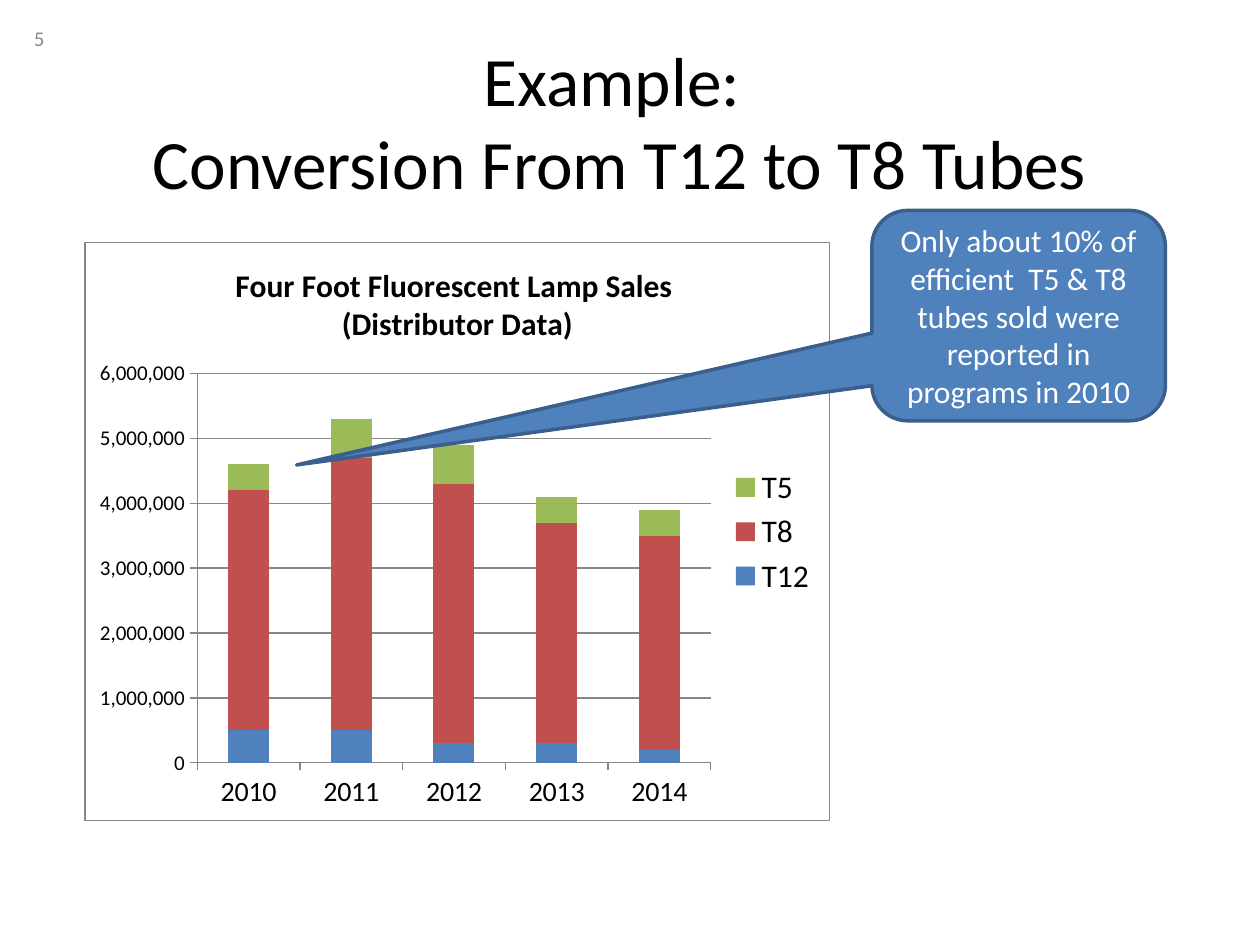
import pptx
import pptx.chart.data
import pptx.dml.color
import pptx.enum.chart
import pptx.enum.shapes
import pptx.enum.text
import pptx.oxml
import pptx.oxml.ns
import pptx.util

Inches = pptx.util.Inches
Pt = pptx.util.Pt
COLORS = {
    "text": "000000",
    "number": "8C8C8C",
    "white": "FFFFFF",
    "axis": "868686",
    "callout": "4F81BD",
    "outline": "3A5F8C",
    "T12": "4F81BD",
    "T8": "C0504D",
    "T5": "9BBB59",
}
YEARS = ["2010", "2011", "2012", "2013", "2014"]
SALES = {
    "T12": [500000, 500000, 300000, 300000, 200000],
    "T8": [3700000, 4200000, 4000000, 3400000, 3300000],
    "T5": [400000, 600000, 600000, 400000, 400000],
}


def color(name):
    return pptx.dml.color.RGBColor.from_string(COLORS[name])


def style_font(font, size, name="text", bold=False):
    font.name = "Calibri"
    font.size = Pt(size)
    font.bold = bold
    font.color.rgb = color(name)


def write_text(frame, text, size, name="text", bold=False, align="CENTER"):
    paragraph = frame.paragraphs[0]
    paragraph.text = text
    paragraph.alignment = getattr(pptx.enum.text.PP_ALIGN, align)
    for run in paragraph.runs:
        style_font(run.font, size, name, bold)


class SlideBuilder:
    def __init__(self, slide):
        self.slide = slide

    def text(self, box, text, size, **options):
        shape = self.slide.shapes.add_textbox(*map(Inches, box))
        frame = shape.text_frame
        frame.word_wrap = True
        frame.vertical_anchor = pptx.enum.text.MSO_ANCHOR.MIDDLE
        write_text(frame, text, size, **options)

    def callout(self, box, text, size, adjustments):
        kind = pptx.enum.shapes.MSO_SHAPE.ROUNDED_RECTANGULAR_CALLOUT
        shape = self.slide.shapes.add_shape(kind, *map(Inches, box))
        shape.shadow.inherit = False
        for index, value in enumerate(adjustments):
            shape.adjustments[index] = value
        shape.fill.solid()
        shape.fill.fore_color.rgb = color("callout")
        shape.line.color.rgb = color("outline")
        shape.line.width = Pt(2)
        shape.text_frame.word_wrap = True
        shape.text_frame.vertical_anchor = pptx.enum.text.MSO_ANCHOR.MIDDLE
        write_text(shape.text_frame, text, size, name="white")

    def stacked_chart(self, box, title, categories, values):
        data = pptx.chart.data.CategoryChartData(number_format="#,##0")
        data.categories = categories
        for name, numbers in values.items():
            data.add_series(name, numbers)
        kind = pptx.enum.chart.XL_CHART_TYPE.COLUMN_STACKED
        chart = self.slide.shapes.add_chart(kind, *map(Inches, box), data).chart
        style_font(chart.font, 10)
        chart.has_title = True
        write_text(chart.chart_title.text_frame, title, 18, bold=True)
        chart.chart_title.include_in_layout = False
        chart.has_legend = True
        chart.legend.position = pptx.enum.chart.XL_LEGEND_POSITION.RIGHT
        chart.legend.include_in_layout = False
        style_font(chart.legend.font, 18)
        bars = chart.plots[0]
        bars.gap_width = 150
        bars.overlap = 100
        bars.vary_by_categories = False
        for series in bars.series:
            series.format.fill.solid()
            series.format.fill.fore_color.rgb = color(series.name)
        self.axes(chart)
        self.chart_border(chart)

    def axes(self, chart):
        for axis, size in ((chart.category_axis, 16), (chart.value_axis, 12)):
            style_font(axis.tick_labels.font, size)
            axis.major_tick_mark = pptx.enum.chart.XL_TICK_MARK.OUTSIDE
            axis.minor_tick_mark = pptx.enum.chart.XL_TICK_MARK.NONE
            axis.format.line.color.rgb = color("axis")
            axis.format.line.width = Pt(0.75)
        value_axis = chart.value_axis
        value_axis.minimum_scale = 0
        value_axis.maximum_scale = 6000000
        value_axis.major_unit = 1000000
        value_axis.tick_labels.number_format = "#,##0"
        value_axis.tick_labels.number_format_is_linked = False
        value_axis.has_major_gridlines = True
        gridline = value_axis.major_gridlines.format.line
        gridline.color.rgb = color("axis")
        gridline.width = Pt(0.75)

    def chart_border(self, chart):
        chart_node = chart.element.find(pptx.oxml.ns.qn("c:chart"))
        chart_node.addnext(pptx.oxml.parse_xml(
            f'<c:spPr {pptx.oxml.ns.nsdecls("c", "a")}><a:noFill/>'
            f'<a:ln w="{Pt(0.75)}"><a:solidFill>'
            f'<a:srgbClr val="{COLORS["axis"]}"/></a:solidFill></a:ln></c:spPr>'))


def main():
    presentation = pptx.Presentation()
    presentation.slide_width = Inches(10)
    presentation.slide_height = Inches(7.5)
    builder = SlideBuilder(presentation.slides.add_slide(presentation.slide_layouts[6]))
    builder.text((0.42, 0.33, 9, 1.25), "Example: \vConversion From T12 to T8 Tubes", 39.6)
    builder.text((0.17, 0.1, 2.33, 0.4), "5", 12, name="number", align="LEFT")
    builder.stacked_chart(
        (0.67, 1.92, 5.92, 4.6),
        "Four Foot Fluorescent Lamp Sales \v(Distributor Data)",
        YEARS, SALES)
    builder.callout(
        (6.92, 1.67, 2.33, 1.67),
        "Only about 10% of efficient  T5 & T8 tubes sold were reported in programs in 2010",
        18, adjustments=(-2.46, 0.71, 0.17))
    presentation.save("out.pptx")


if __name__ == "__main__":
    main()
